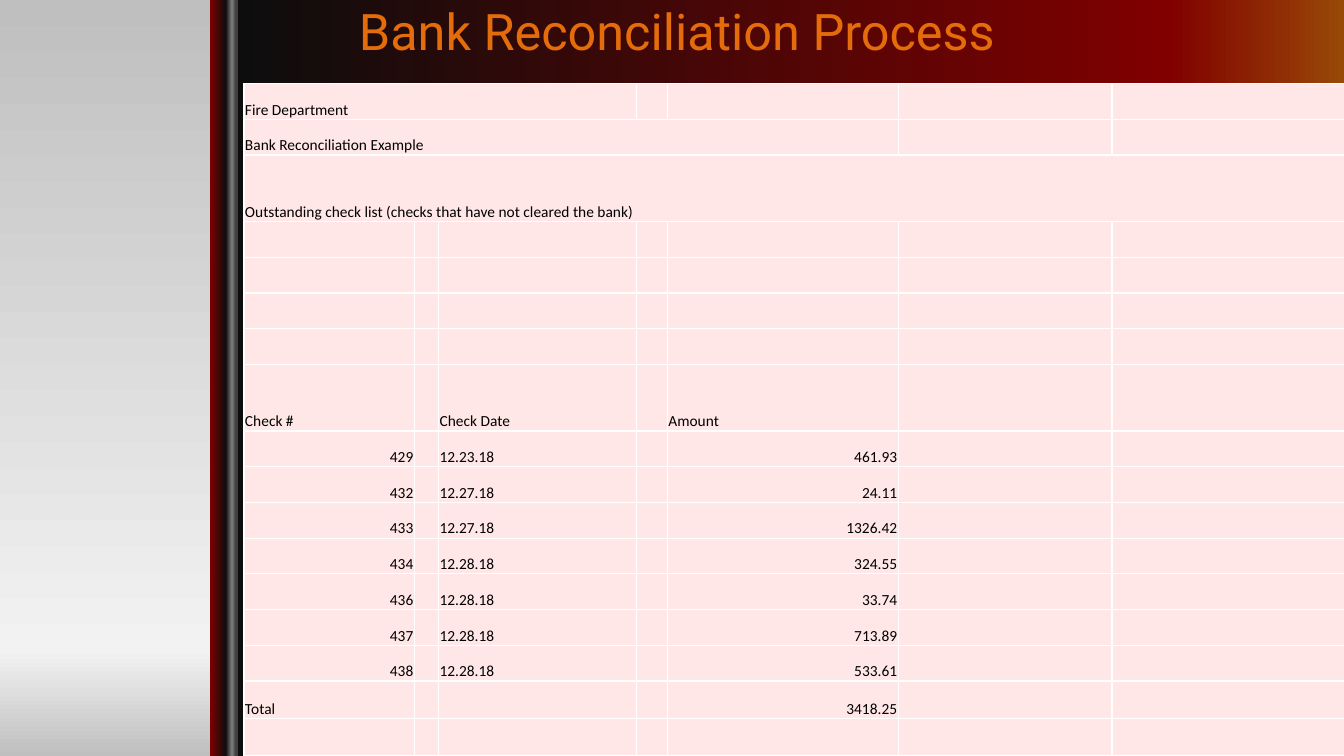
from lxml import etree
from pptx import Presentation
from pptx.dml.color import RGBColor
from pptx.enum.shapes import MSO_SHAPE as Shape
from pptx.enum.text import MSO_ANCHOR as Anchor, MSO_AUTO_SIZE as AutoSize, PP_ALIGN as Align
from pptx.oxml.ns import qn
from pptx.util import Inches, Pt

TITLE = "Bank Reconciliation Process"
HEADINGS = [  # text, columns spanned
    ("Fire Department", 3),
    ("Bank Reconciliation Example", 5),
    ("Outstanding check list (checks that have not cleared the bank)", 7),
]
LABELS = ("Check #", "Check Date", "Amount")
CHECKS = [
    ("429", "12.23.18", "461.93"),
    ("432", "12.27.18", "24.11"),
    ("433", "12.27.18", "1326.42"),
    ("434", "12.28.18", "324.55"),
    ("436", "12.28.18", "33.74"),
    ("437", "12.28.18", "713.89"),
    ("438", "12.28.18", "533.61"),
]
TOTAL = ("Total", "", "3418.25")

COLORS = {
    "title": "E46C0A", "text": "000000", "cell": "FFE7E7", "border": "FFFFFF",
    "silver": "BFBFBF", "pale": "F2F2F2", "black": "0D0D0D", "red": "800000",
    "rust": "984807", "gray": "808080", "charcoal": "404040",
}
WIDTH, HEIGHT = 13.33, 7.5
TABLE_LEFT, TABLE_TOP, TABLE_HEIGHT = 2.42, 0.83, 6.67
COLUMN_WIDTHS = [1.69, 0.24, 1.96, 0.31, 2.29, 2.12, 2.56]
FIELD_COLUMNS = (0, 2, 4)
BLANK_ROWS = 4
LABEL_ROW = len(HEADINGS) + BLANK_ROWS
TOTAL_ROW = LABEL_ROW + len(CHECKS) + 1
ROW_COUNT = TOTAL_ROW + 2
SPECIAL_ROWS = {2: 0.66, LABEL_ROW: 0.66, TOTAL_ROW: 0.37, TOTAL_ROW + 1: 0.37}
ROW_HEIGHT = (TABLE_HEIGHT - sum(SPECIAL_ROWS.values())) / (ROW_COUNT - len(SPECIAL_ROWS))

BANDS = [  # left, right, gradient stops from left to right
    (2.36, WIDTH, [(0, "black"), (84, "red"), (100, "rust")]),
    (2.08, 2.27, [(0, "red"), (87, "black"), (100, "rust")]),
    (2.24, 2.36, [(0, "black"), (51, "gray"), (81, "charcoal")]),
]
FLAME = [(13.33, 0.56), (13.21, 0.47), (12.96, 0.34), (12.7, 0.23), (12.54, 0.18),
         (12.47, 0.18), (12.6, 0.34), (12.77, 0.62), (12.83, 0.83), (13.33, 0.83)]


def rgb(name):
    return RGBColor.from_string(COLORS[name])


def add_color(parent, name):
    return etree.SubElement(parent, qn("a:srgbClr"), val=COLORS[name])


def set_gradient(fill, element, stops, angle):
    """Replace the default gradient in element by the given stops."""
    fill.gradient()
    gradient = next(element.iter(qn("a:gradFill")))
    for child in list(gradient):
        gradient.remove(child)
    stop_list = etree.SubElement(gradient, qn("a:gsLst"))
    for position, name in stops:
        add_color(etree.SubElement(stop_list, qn("a:gs"), pos=str(position * 1000)), name)
    etree.SubElement(gradient, qn("a:lin"), ang=str(angle * 60000), scaled="0")


def add_borders(cell):
    properties = cell._tc.get_or_add_tcPr()
    for index, side in enumerate(("lnL", "lnR", "lnT", "lnB")):
        line = etree.Element(qn(f"a:{side}"), w=str(Pt(1)))
        add_color(etree.SubElement(line, qn("a:solidFill")), "border")
        properties.insert(index, line)


def write(para, text, **formats):
    span = para.add_run()
    span.text = text
    span.font.color.rgb = rgb(formats.pop("color"))
    for name, value in formats.items():
        setattr(span.font, name, value)


def add_backdrop(page):
    set_gradient(page.background.fill, page.element,
                 [(0, "silver"), (86, "pale"), (100, "silver")], 90)
    for left, right, stops in BANDS:
        band = page.shapes.add_shape(Shape.RECTANGLE, Inches(left), 0,
                                     Inches(right - left), Inches(HEIGHT))
        band.shadow.inherit = False
        band.line.fill.background()
        set_gradient(band.fill, band.element, stops, 0)
    builder = page.shapes.build_freeform(*FLAME[0], scale=Inches(1))
    builder.add_line_segments(FLAME[1:])
    flame = builder.convert_to_shape()
    flame.shadow.inherit = False
    flame.line.fill.background()
    flame.fill.solid()
    flame.fill.fore_color.rgb = rgb("rust")
    color = next(flame.element.iter(qn("a:srgbClr")))
    etree.SubElement(color, qn("a:alpha"), val="21000")


def place_title(page):
    title = page.shapes.title
    page.shapes.element.append(title.element)
    place = {"left": 3.46, "top": 0.08, "width": 9.56, "height": 0.57}
    for name, value in place.items():
        setattr(title, name, Inches(value))
    frame = title.text_frame
    frame.auto_size = AutoSize.NONE
    frame.vertical_anchor = Anchor.BOTTOM
    para = frame.paragraphs[0]
    para.alignment = Align.LEFT
    write(para, TITLE, color="title", size=Pt(36), name="Roboto")


def add_check_table(page):
    table = page.shapes.add_table(
        ROW_COUNT, len(COLUMN_WIDTHS), Inches(TABLE_LEFT), Inches(TABLE_TOP),
        Inches(sum(COLUMN_WIDTHS)), Inches(TABLE_HEIGHT)).table
    table.first_row = table.horz_banding = False
    for column, width in zip(table.columns, COLUMN_WIDTHS):
        column.width = Inches(width)
    for index, row in enumerate(table.rows):
        row.height = Inches(SPECIAL_ROWS.get(index, ROW_HEIGHT))
    cell_format = {"vertical_anchor": Anchor.BOTTOM, "margin_left": Inches(0.01),
                   "margin_right": Inches(0.01), "margin_top": Inches(0.01),
                   "margin_bottom": 0}
    for cell in table.iter_cells():
        for name, value in cell_format.items():
            setattr(cell, name, value)
        cell.fill.solid()
        cell.fill.fore_color.rgb = rgb("cell")
        add_borders(cell)

    entries = {}
    for row, (text, span) in enumerate(HEADINGS):
        table.cell(row, 0).merge(table.cell(row, span - 1))
        entries[row, 0] = text
    for row, record in enumerate([LABELS, *CHECKS, TOTAL], LABEL_ROW):
        entries.update({(row, column): text for column, text in zip(FIELD_COLUMNS, record)})
    for (row, column), text in entries.items():
        if not text:
            continue
        para = table.cell(row, column).text_frame.paragraphs[0]
        is_number = text.replace(".", "", 1).isdigit()
        para.alignment = Align.RIGHT if is_number else Align.LEFT
        write(para, text, color="text", size=Pt(11), name="Calibri")


def main():
    deck = Presentation()
    deck.slide_width, deck.slide_height = Inches(WIDTH), Inches(HEIGHT)
    page = deck.slides.add_slide(deck.slide_layouts[5])
    add_backdrop(page)
    place_title(page)
    add_check_table(page)
    deck.save("out.pptx")


if __name__ == "__main__":
    main()
